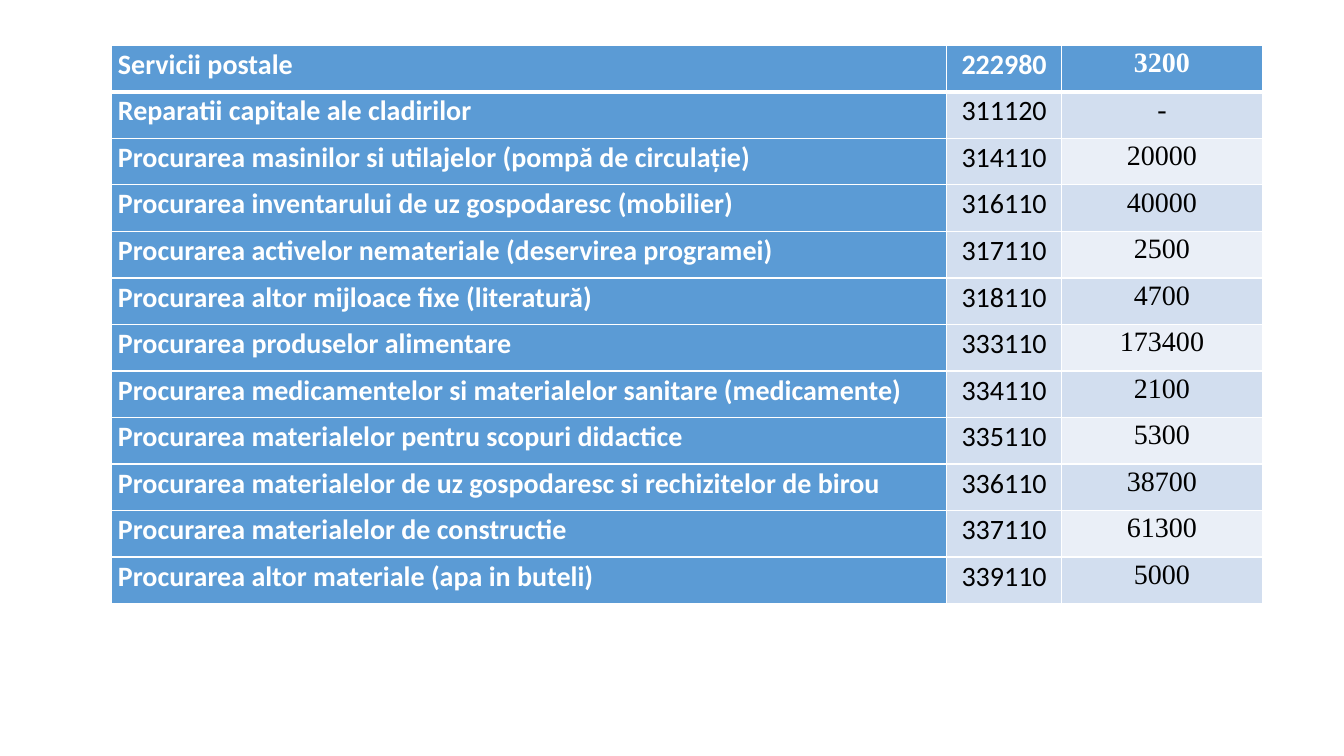
from lxml.etree import SubElement
from pptx import Presentation
from pptx.dml.color import RGBColor as Rgb
from pptx.enum.text import PP_ALIGN as Align
from pptx.oxml.ns import qn
from pptx.util import Inches, Pt

COLORS = {"blue": "5B9BD5", "band": "D2DEEF", "light": "EAEFF7",
          "white": "FFFFFF", "black": "000000"}

# Budget lines: name, code, amount
EXPENSES = [
    ("Servicii postale", "222980", "3200"),
    ("Reparatii capitale ale cladirilor", "311120", "-"),
    ("Procurarea masinilor si utilajelor (pompă de circulație)", "314110", "20000"),
    ("Procurarea inventarului de uz gospodaresc (mobilier)", "316110", "40000"),
    ("Procurarea activelor nemateriale (deservirea programei)", "317110", "2500"),
    ("Procurarea altor mijloace fixe (literatură)", "318110", "4700"),
    ("Procurarea produselor alimentare", "333110", "173400"),
    ("Procurarea medicamentelor si materialelor sanitare (medicamente)", "334110", "2100"),
    ("Procurarea materialelor pentru scopuri didactice", "335110", "5300"),
    ("Procurarea materialelor de uz gospodaresc si rechizitelor de birou", "336110", "38700"),
    ("Procurarea materialelor de constructie", "337110", "61300"),
    ("Procurarea altor materiale (apa in buteli)", "339110", "5000"),
]


class BudgetSlide:
    fonts = ("Calibri", "Calibri", "Times New Roman")
    size = Pt(20)
    line_spacing = 1.07
    side_margin = Inches(0.07)

    def __init__(self, deck):
        self.slide = deck.slides.add_slide(deck.slide_layouts[6])

    def borders(self, cell, **widths):
        properties = cell._tc.get_or_add_tcPr()
        for side, width in widths.items():
            line = SubElement(properties, qn(f"a:ln{side}"), w=str(Pt(width)))
            fill = SubElement(line, qn("a:solidFill"))
            SubElement(fill, qn("a:srgbClr"), val=COLORS["white"])

    def cell(self, cell, text, row, column):
        strong = row == 0 or column == 0
        # Borders come before the fill in the cell properties
        self.borders(cell, L=1, R=1, T=3 if row == 1 else 1, B=3 if row == 0 else 1)
        banded = column == 1 or row % 2 == 1
        fill = "blue" if strong else "band" if banded else "light"
        cell.fill.solid()
        cell.fill.fore_color.rgb = Rgb.from_string(COLORS[fill])
        cell.margin_left = cell.margin_right = self.side_margin
        cell.margin_top = cell.margin_bottom = 0

        paragraph = cell.text_frame.paragraphs[0]
        paragraph.alignment = Align.CENTER if column else Align.LEFT
        paragraph.line_spacing = self.line_spacing
        run = paragraph.add_run()
        run.text = text
        run.font.name = self.fonts[column]
        run.font.size = self.size
        run.font.bold = strong
        run.font.color.rgb = Rgb.from_string(COLORS["white" if strong else "black"])

    def table(self, rows, left, top, widths, height):
        budget = self.slide.shapes.add_table(
            len(rows), len(widths), Inches(left), Inches(top),
            Inches(sum(widths)), Inches(height)).table
        budget.first_col = True
        for column, width in zip(budget.columns, widths):
            column.width = Inches(width)
        for r, expense in enumerate(rows):
            budget.rows[r].height = Inches(height / len(rows))
            for c, text in enumerate(expense):
                self.cell(budget.cell(r, c), text, r, c)


def main():
    deck = Presentation()
    deck.slide_width, deck.slide_height = Inches(13.33), Inches(7.5)
    # Expense table
    BudgetSlide(deck).table(EXPENSES, 1.1, 0.45, (8.29, 1.14, 1.99), 5.54)
    deck.save("out.pptx")


if __name__ == "__main__":
    main()
